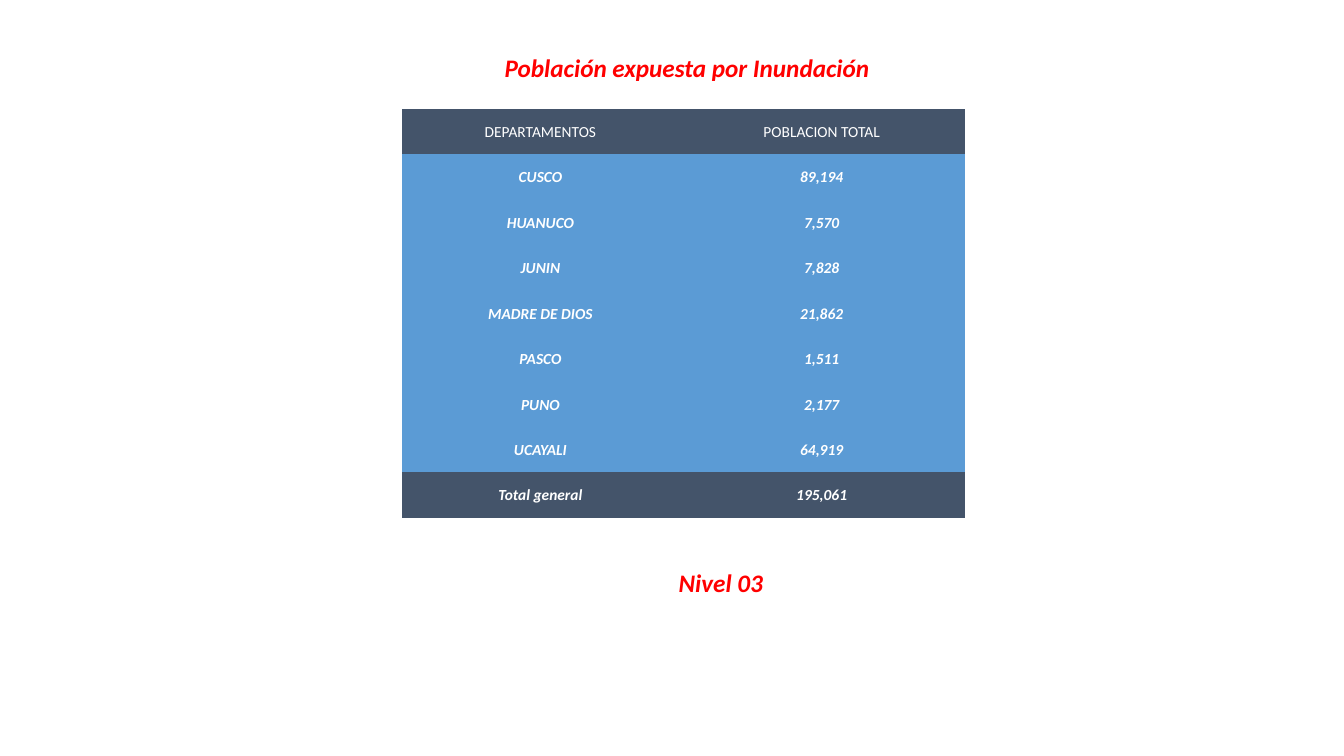
from dataclasses import dataclass

from pptx import Presentation
from pptx.dml.color import RGBColor
from pptx.enum.text import MSO_ANCHOR, MSO_AUTO_SIZE, PP_ALIGN
from pptx.util import Inches, Pt

CENTER = PP_ALIGN.CENTER
MIDDLE = MSO_ANCHOR.MIDDLE
GROW = MSO_AUTO_SIZE.SHAPE_TO_FIT_TEXT
NO_GRID = "{2D5ABB26-0587-4C30-8999-92F81FD0307C}"
TITLE_ONLY = 5


@dataclass(frozen=True)
class Theme:
    font: str = "Calibri"
    red: str = "FF0000"
    white: str = "FFFFFF"
    dark: str = "44546A"
    blue: str = "5B9BD5"
    head: int = 18
    cell: int = 11


THEME = Theme()
ROWS = [
    ("DEPARTAMENTOS", "POBLACION TOTAL"),
    ("CUSCO", "89,194"),
    ("HUANUCO", "7,570"),
    ("JUNIN", "7,828"),
    ("MADRE DE DIOS", "21,862"),
    ("PASCO", "1,511"),
    ("PUNO", "2,177"),
    ("UCAYALI", "64,919"),
    ("Total general", "195,061"),
]


def write(frame, text, size, color, strong=True):
    """Put one centred line in a frame; strong means bold italic."""
    para = frame.paragraphs[0]
    para.alignment = CENTER
    run = para.add_run()
    run.text = text
    font = run.font
    font.name, font.size = THEME.font, Pt(size)
    font.bold = font.italic = strong
    font.color.rgb = RGBColor.from_string(color)


def label(shape, box, text):
    """Place a red heading in its box."""
    shape.left, shape.top, shape.width, shape.height = map(Inches, box)
    frame = shape.text_frame
    frame.word_wrap = False
    frame.auto_size = GROW
    frame.vertical_anchor = MIDDLE
    write(frame, text, THEME.head, THEME.red)


def grid(slide, box, widths):
    """Draw the population table with dark first and last rows."""
    frame = slide.shapes.add_table(len(ROWS), len(widths), *map(Inches, box))
    table = frame.table
    table.first_row = table.horz_banding = False
    props = table._tbl.tblPr
    props.find("{*}tableStyleId").text = NO_GRID
    for col, width in zip(table.columns, widths):
        col.width = Inches(width)
    last = len(ROWS) - 1
    for r, row in enumerate(ROWS):
        fill = THEME.dark if r in (0, last) else THEME.blue
        for c, text in enumerate(row):
            cell = table.cell(r, c)
            cell.fill.solid()
            cell.fill.fore_color.rgb = RGBColor.from_string(fill)
            cell.vertical_anchor = MIDDLE
            cell.margin_left = cell.margin_right = cell.margin_top = Inches(0.01)
            cell.margin_bottom = 0
            write(cell.text_frame, text, THEME.cell, THEME.white, strong=r > 0)


def main():
    deck = Presentation()
    deck.slide_width, deck.slide_height = Inches(13.33), Inches(7.5)
    slide = deck.slides.add_slide(deck.slide_layouts[TITLE_ONLY])
    label(slide.shapes.title, (4.89, 0.47, 3.85, 0.4), "Población expuesta por Inundación")
    level = (6.6, 5.58, 1.1, 0.4)
    label(slide.shapes.add_textbox(*map(Inches, level)), level, "Nivel 03")
    grid(slide, (3.99, 1.08, 5.58, 4.06), (2.74, 2.84))
    deck.save("out.pptx")


if __name__ == "__main__":
    main()
